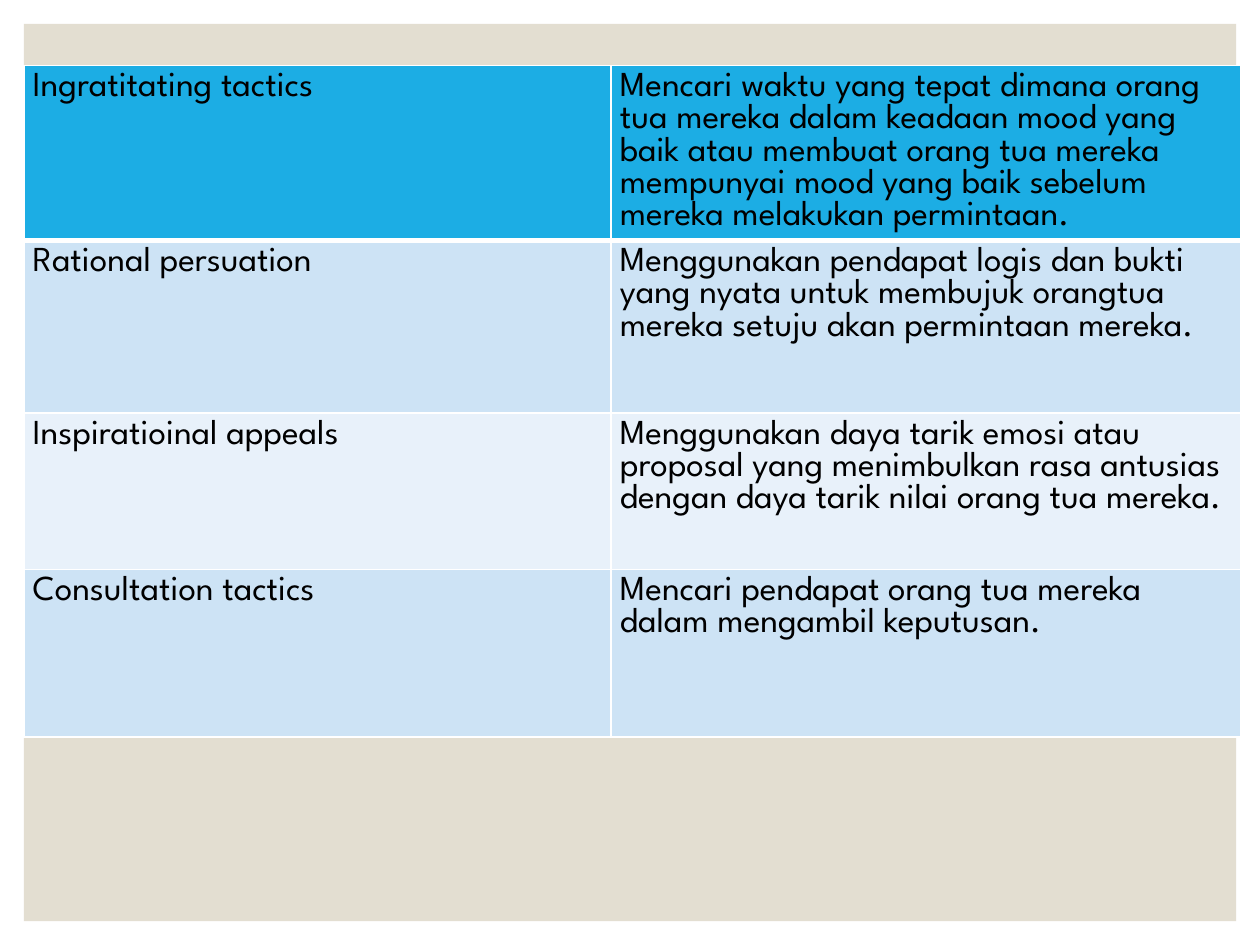
from lxml import etree
from pptx import Presentation
from pptx.dml.color import RGBColor
from pptx.enum.shapes import MSO_SHAPE
from pptx.oxml.ns import qn
from pptx.util import Inches, Pt

RECT = MSO_SHAPE.RECTANGLE
FONT = "League Spartan"
COLORS = {
    "panel": "E3DED1",
    "head": "1CADE4",
    "odd": "CDE3F5",
    "even": "E8F1FA",
    "line": "FFFFFF",
    "text": "000000",
}
TACTICS = [
    ("Ingratitating tactics",
     "Mencari waktu yang tepat dimana orang tua mereka dalam keadaan mood yang "
     "baik atau membuat orang tua mereka mempunyai mood yang baik sebelum "
     "mereka melakukan permintaan."),
    ("Rational persuation",
     "Menggunakan pendapat logis dan bukti yang nyata untuk membujuk orangtua "
     "mereka setuju akan permintaan mereka."),
    ("Inspiratioinal appeals",
     "Menggunakan daya tarik emosi atau proposal yang menimbulkan rasa antusias "
     "dengan daya tarik nilai orang tua mereka."),
    ("Consultation tactics",
     "Mencari pendapat orang tua mereka dalam mengambil keputusan."),
]
WIDTHS = [4.66, 5]
HEIGHTS = [1.39, 1.37, 1.24, 1.33]


def color(name):
    return RGBColor.from_string(COLORS[name])


class Deck:
    def __init__(self, slide, font, size):
        self.slide = slide
        self.font = font
        self.size = size

    def panel(self, left, top, width, height, fill):
        box = self.slide.shapes.add_shape(
            RECT, Inches(left), Inches(top), Inches(width), Inches(height))
        box.shadow.inherit = False
        box.fill.solid()
        box.fill.fore_color.rgb = color(fill)
        box.line.fill.background()

    def border(self, cell, base):
        props = cell._tc.get_or_add_tcPr()
        for side, width in (("L", 1), ("R", 1), ("T", 1), ("B", base)):
            line = etree.SubElement(props, qn(f"a:ln{side}"), w=str(Pt(width)))
            fill = etree.SubElement(line, qn("a:solidFill"))
            etree.SubElement(fill, qn("a:srgbClr"), val=COLORS["line"])

    def cell(self, cell, text, fill, base):
        cell.text = text
        cell.margin_left = cell.margin_right = Inches(0.07)
        cell.margin_top = cell.margin_bottom = Inches(0.05)
        font = cell.text_frame.paragraphs[0].font
        font.name, font.size, font.bold = self.font, Pt(self.size), False
        font.color.rgb = color("text")
        self.border(cell, base)
        cell.fill.solid()
        cell.fill.fore_color.rgb = color(fill)

    def table(self, left, top, widths, heights, rows):
        grid = self.slide.shapes.add_table(
            len(rows), len(widths), Inches(left), Inches(top),
            Inches(sum(widths)), Inches(sum(heights))).table
        for col, width in zip(grid.columns, widths):
            col.width = Inches(width)
        for row, height in zip(grid.rows, heights):
            row.height = Inches(height)
        for r, texts in enumerate(rows):
            # Header row first, then alternating bands
            fill = "head" if r == 0 else "odd" if r % 2 else "even"
            for c, text in enumerate(texts):
                self.cell(grid.cell(r, c), text, fill, 1 if r else 3)


def main():
    show = Presentation()
    show.slide_width, show.slide_height = Inches(10), Inches(7.5)
    deck = Deck(show.slides.add_slide(show.slide_layouts[6]), FONT, 20)

    # Backdrop
    deck.panel(0.19, 0.19, 9.62, 7.12, "panel")

    # Tactics and their meaning
    deck.table(0.19, 0.52, WIDTHS, HEIGHTS, TACTICS)

    show.save("out.pptx")


if __name__ == "__main__":
    main()
